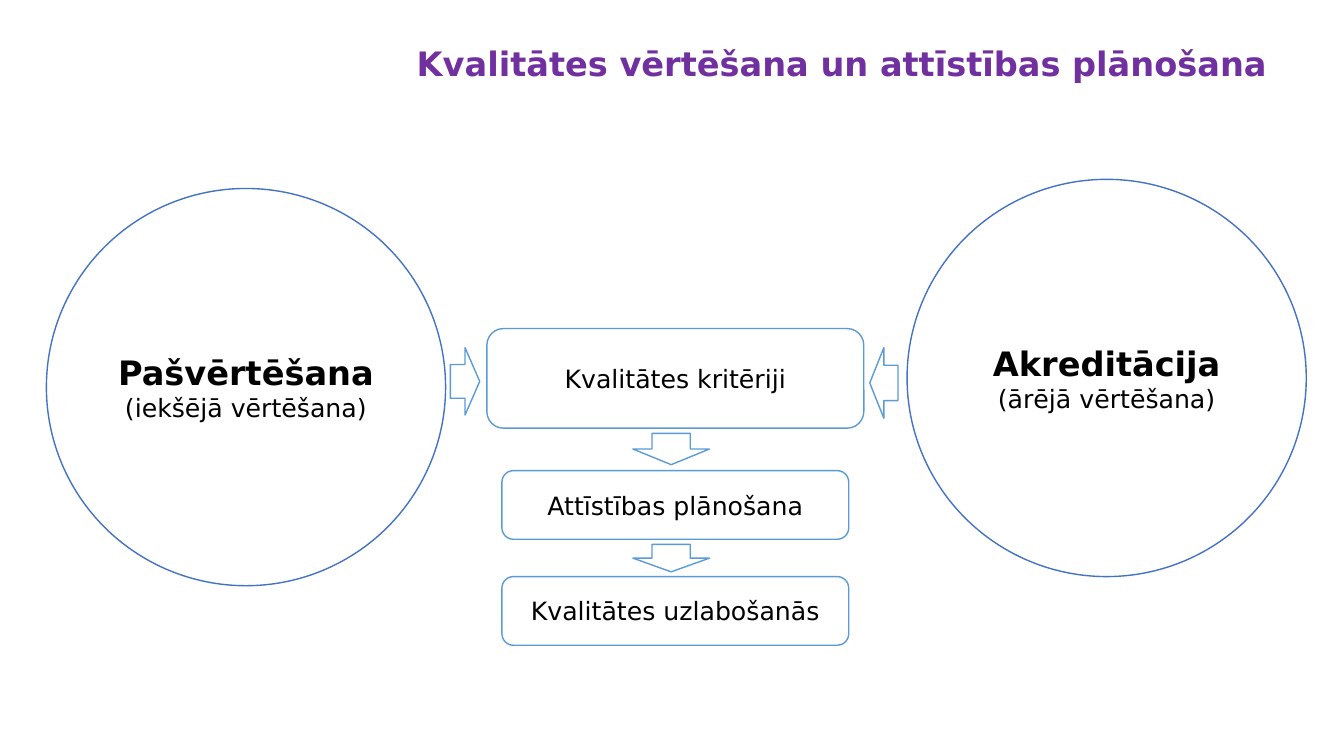
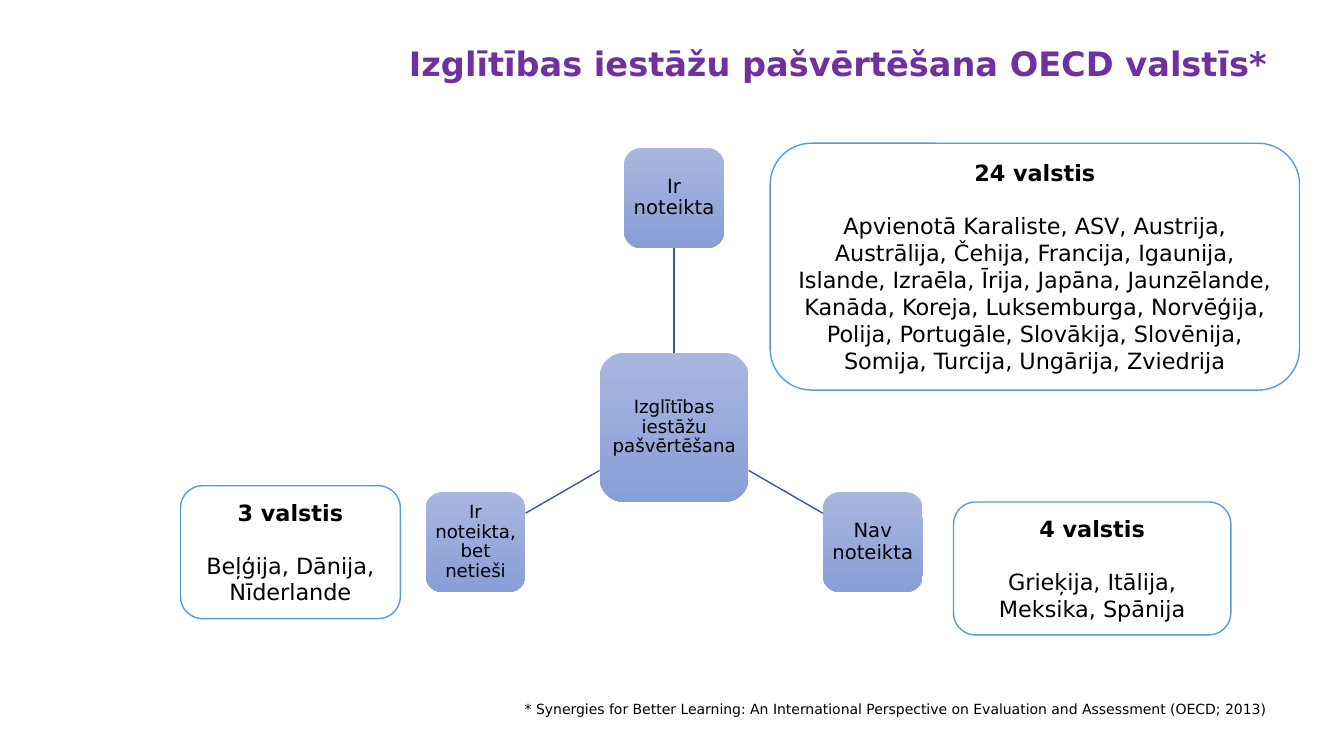
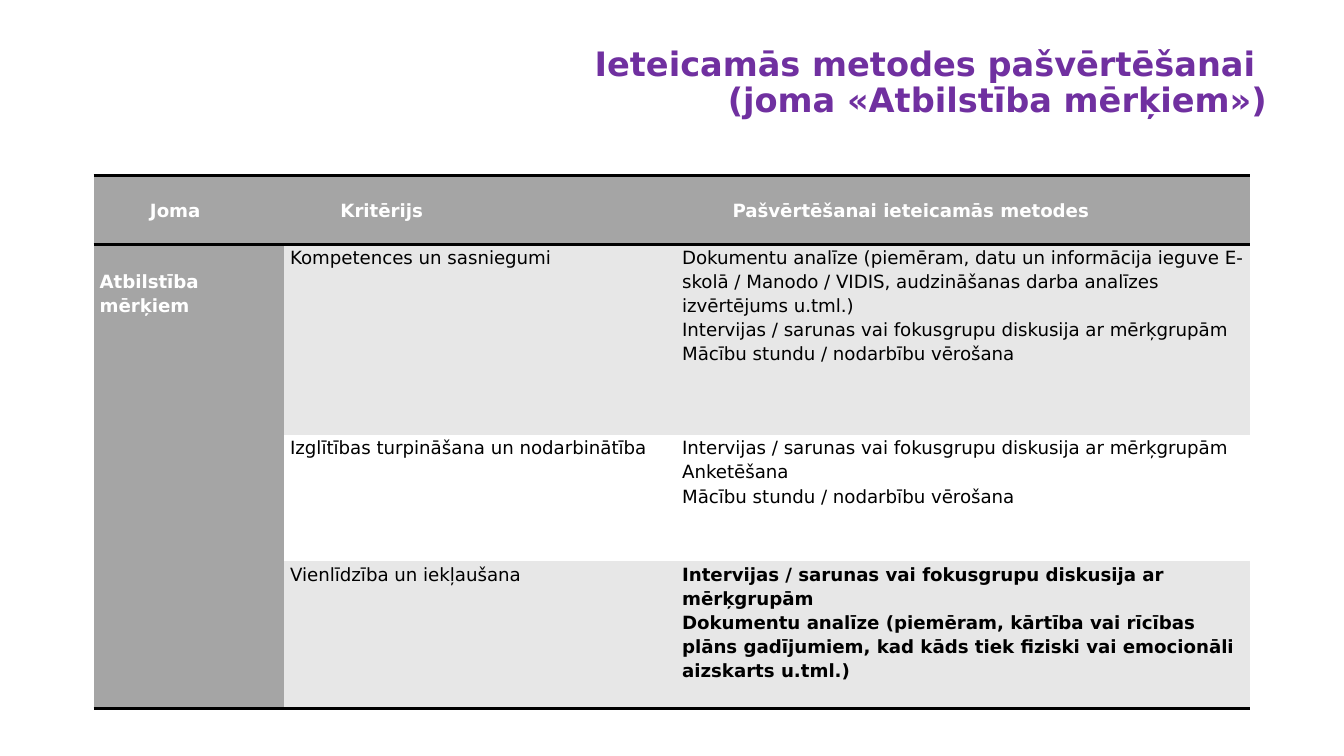
from dataclasses import dataclass
from math import cos, radians, sin

from lxml import etree
from pptx import Presentation
from pptx.dml.color import RGBColor
from pptx.enum.shapes import MSO_CONNECTOR, MSO_SHAPE
from pptx.enum.text import MSO_ANCHOR, PP_ALIGN
from pptx.oxml.ns import qn
from pptx.util import Cm, Pt

ELLIPSE, ROUNDED = MSO_SHAPE.OVAL, MSO_SHAPE.ROUNDED_RECTANGLE
RIGHT_ARROW, LEFT_ARROW = MSO_SHAPE.RIGHT_ARROW, MSO_SHAPE.LEFT_ARROW
DOWN_ARROW = MSO_SHAPE.DOWN_ARROW
STRAIGHT = MSO_CONNECTOR.STRAIGHT
LEFT, CENTER, RIGHT = PP_ALIGN.LEFT, PP_ALIGN.CENTER, PP_ALIGN.RIGHT
TOP, MIDDLE = MSO_ANCHOR.TOP, MSO_ANCHOR.MIDDLE
PLAIN_TABLE = "{2D5ABB26-0587-4C30-8999-92F81FD0307C}"
INSETS = (0.25, 0.13, 0.25, 0.13)


@dataclass(frozen=True)
class Theme:
    font: str = "DejaVu Sans"
    title: str = "7030A0"
    text: str = "000000"
    white: str = "FFFFFF"
    circle: str = "4472C4"
    outline: str = "5B9BD5"
    link: str = "365B9D"
    node_top: str = "A8B7DF"
    node_bottom: str = "889ED7"
    header: str = "A5A5A5"
    band: str = "E7E7E7"
    title_size: int = 24
    label_size: int = 18
    callout_size: int = 16
    node_size: int = 14
    small_size: int = 13
    note_size: int = 10


THEME = Theme()


def rgb(value):
    return RGBColor.from_string(value)


def set_values(target, values):
    for name, value in values.items():
        setattr(target, name, value)


class SlideBuilder:
    def __init__(self, deck):
        self.deck = deck
        self.slide = None

    def start(self, title):
        self.slide = self.deck.slides.add_slide(self.deck.slide_layouts[6])
        self.text_box((9.6, 1.07, 22.58, 2.87), title, THEME.title_size,
                      color=THEME.title, bold=True)

    def fill_text(self, frame, lines, size, color=THEME.text, bold=False,
                  align=CENTER, spacing=1.0):
        """Fill a frame; a line is a text or a (text, overrides) pair."""
        for index, line in enumerate(lines):
            text, changes = (line, {}) if isinstance(line, str) else line
            style = {"size": size, "bold": bold, "before": 0} | changes
            para = frame.paragraphs[0] if index == 0 else frame.add_paragraph()
            para.text = text
            set_values(para, {"alignment": align, "line_spacing": spacing,
                              "space_before": Pt(style["before"])})
            for span in para.runs:
                set_values(span.font, {"name": THEME.font, "bold": style["bold"],
                                       "size": Pt(style["size"])})
                span.font.color.rgb = rgb(color)

    def set_frame(self, frame, anchor, insets=INSETS):
        left, top, right, bottom = map(Cm, insets)
        set_values(frame, {"word_wrap": True, "vertical_anchor": anchor,
                           "margin_left": left, "margin_top": top,
                           "margin_right": right, "margin_bottom": bottom})

    def text_box(self, place, text, size, **style):
        box = self.slide.shapes.add_textbox(*map(Cm, place))
        self.set_frame(box.text_frame, TOP)
        self.fill_text(box.text_frame, [text], size, align=RIGHT, spacing=0.9, **style)

    def shape(self, kind, place, lines=(), size=THEME.label_size, line=THEME.outline):
        shape = self.slide.shapes.add_shape(kind, *map(Cm, place))
        shape.shadow.inherit = False
        shape.fill.solid()
        shape.fill.fore_color.rgb = rgb(THEME.white)
        shape.line.color.rgb = rgb(line)
        shape.line.width = Pt(1)
        self.set_frame(shape.text_frame, MIDDLE)
        self.fill_text(shape.text_frame, lines, size)

    def callout(self, place, heading, countries):
        self.shape(ROUNDED, place, [(heading, {"bold": True}),
                                    (countries, {"before": 18.6})],
                   THEME.callout_size)

    def node(self, center, side, text, size):
        left, top = (value - side / 2 for value in center)
        node = self.slide.shapes.add_shape(
            ROUNDED, Cm(left), Cm(top), Cm(side), Cm(side))
        node.shadow.inherit = False
        node.line.fill.background()
        node.fill.gradient()
        node.fill.gradient_angle = 270
        for stop, color in zip(node.fill.gradient_stops,
                               (THEME.node_top, THEME.node_bottom)):
            stop.color.rgb = rgb(color)
        self.set_frame(node.text_frame, MIDDLE, (0.1,) * 4)
        self.fill_text(node.text_frame, [text], size, spacing=0.9)

    def link(self, start, end):
        link = self.slide.shapes.add_connector(STRAIGHT, *map(Cm, start + end))
        link.line.color.rgb = rgb(THEME.link)
        link.line.width = Pt(1)
        etree.SubElement(link._element.spPr, qn("a:effectLst"))

    def table(self, place, widths, heights):
        left, top = place
        table = self.slide.shapes.add_table(
            len(heights), len(widths), Cm(left), Cm(top),
            Cm(sum(widths)), Cm(sum(heights))).table
        set_values(table, {"first_row": False, "horz_banding": False})
        table._tbl.tblPr.find(qn("a:tableStyleId")).text = PLAIN_TABLE
        for column, width in zip(table.columns, widths):
            column.width = Cm(width)
        for row, height in zip(table.rows, heights):
            row.height = Cm(height)
        return table

    def cell(self, cell, lines, fill, edges=(), indent=0, drop=0,
             anchor=TOP, **style):
        set_values(cell, {"vertical_anchor": anchor, "margin_top": Cm(drop),
                          "margin_bottom": 0, "margin_right": Cm(0.15),
                          "margin_left": Cm(0.15 + indent)})
        cell.fill.solid()
        cell.fill.fore_color.rgb = rgb(fill)
        self.fill_text(cell.text_frame, lines, THEME.small_size, align=LEFT,
                       spacing=1.15, **style)
        for position, edge in enumerate(edges):
            border = etree.Element(qn(f"a:{edge}"), w=str(Pt(2)))
            paint = etree.SubElement(border, qn("a:solidFill"))
            etree.SubElement(paint, qn("a:srgbClr"), val=THEME.text)
            cell._tc.get_or_add_tcPr().insert(position, border)


def build_quality_cycle(builder):
    builder.start("Kvalitātes vērtēšana un attīstības plānošana")
    for left, top, name, note in (
            (1.17, 4.75, "Pašvērtēšana", "(iekšējā vērtēšana)"),
            (22.86, 4.52, "Akreditācija", "(ārējā vērtēšana)")):
        builder.shape(ELLIPSE, (left, top, 10.06, 10.01),
                      [(name, {"size": THEME.title_size, "bold": True}), note],
                      line=THEME.circle)
    builder.shape(ROUNDED, (12.27, 8.28, 9.5, 2.51), ["Kvalitātes kritēriji"])
    for top, text in ((11.86, "Attīstības plānošana"),
                      (14.53, "Kvalitātes uzlabošanās")):
        builder.shape(ROUNDED, (12.65, top, 8.74, 1.73), [text])
    for kind, place in ((RIGHT_ARROW, (11.35, 8.76, 0.74, 1.7)),
                        (LEFT_ARROW, (21.92, 8.76, 0.71, 1.78)),
                        (DOWN_ARROW, (15.95, 10.92, 1.93, 0.79)),
                        (DOWN_ARROW, (15.95, 13.72, 1.93, 0.69))):
        builder.shape(kind, place)


def build_country_map(builder):
    builder.start("Izglītības iestāžu pašvērtēšana OECD valstīs*")
    hub, hub_side, node_side, radius = (16.99, 10.77), 3.76, 2.52, 5.78
    builder.node(hub, hub_side, "Izglītības iestāžu pašvērtēšana", THEME.small_size)
    for angle, text, size in (
            (270, "Ir noteikta", THEME.node_size),
            (30, "Nav noteikta", THEME.node_size),
            (150, "Ir noteikta, bet netieši", THEME.small_size)):
        across, down = cos(radians(angle)), sin(radians(angle))
        reach = 2 * max(abs(across), abs(down))
        start, end, center = (
            (hub[0] + distance * across, hub[1] + distance * down)
            for distance in (hub_side / reach, radius - node_side / reach, radius))
        builder.link(start, end)
        builder.node(center, node_side, text, size)
    builder.callout((24.03, 12.65, 6.99, 3.35), "4 valstis",
                    "Grieķija, Itālija, Meksika, Spānija")
    builder.callout((19.41, 3.61, 13.34, 6.22), "24 valstis",
                    "Apvienotā Karaliste, ASV, Austrija, Austrālija, Čehija, "
                    "Francija, Igaunija, Islande, Izraēla, Īrija, Japāna, "
                    "Jaunzēlande, Kanāda, Koreja, Luksemburga, Norvēģija, "
                    "Polija, Portugāle, Slovākija, Slovēnija, Somija, Turcija, "
                    "Ungārija, Zviedrija")
    builder.callout((4.55, 12.24, 5.54, 3.35), "3 valstis",
                    "Beļģija, Dānija, Nīderlande")
    builder.text_box((11.68, 17.58, 20.47, 0.76),
                     "* Synergies for Better Learning: An International Perspective "
                     "on Evaluation and Assessment (OECD; 2013)", THEME.note_size)


def build_methods(builder):
    builder.start("Ieteicamās metodes pašvērtēšanai \v(joma «Atbilstība mērķiem»)")
    interviews = "Intervijas / sarunas vai fokusgrupu diskusija ar mērķgrupām"
    lessons = "Mācību stundu / nodarbību vērošana"
    criteria = (
        ("Kompetences un sasniegumi",
         ["Dokumentu analīze (piemēram, datu un informācija ieguve E-skolā / "
          "Manodo / VIDIS, audzināšanas darba analīzes izvērtējums u.tml.)",
          interviews, lessons]),
        ("Izglītības turpināšana un nodarbinātība",
         [interviews, "Anketēšana", lessons]),
        ("Vienlīdzība un iekļaušana",
         [interviews,
          "Dokumentu analīze (piemēram, kārtība vai rīcības plāns gadījumiem, "
          "kad kāds tiek fiziski vai emocionāli aizskarts u.tml.)"]))
    table = builder.table((2.36, 4.42), (4.8, 9.88, 14.45), (1.74, 4.8, 3.18, 3.71))
    heading = {"fill": THEME.header, "color": THEME.white, "bold": True}
    for column, text in enumerate(
            ("Joma", "Kritērijs", "Pašvērtēšanai ieteicamās metodes")):
        builder.cell(table.cell(0, column), [text], edges=("lnT", "lnB"),
                     indent=1.27, anchor=MIDDLE, **heading)
    last = len(criteria)
    table.cell(1, 0).merge(table.cell(last, 0))
    builder.cell(table.cell(1, 0), ["Atbilstība mērķiem"], edges=("lnB",),
                 drop=0.61, **heading)
    builder.cell(table.cell(last, 0), [], THEME.header, ("lnB",))
    for row, (criterion, methods) in enumerate(criteria, 1):
        fill = THEME.band if row % 2 else THEME.white
        edges = ("lnB",) if row == last else ()
        builder.cell(table.cell(row, 1), [criterion], fill, edges)
        builder.cell(table.cell(row, 2), methods, fill, edges, bold=row == last)


def main():
    deck = Presentation()
    set_values(deck, {"slide_width": Cm(33.87), "slide_height": Cm(19.05)})
    builder = SlideBuilder(deck)
    for build in (build_quality_cycle, build_country_map, build_methods):
        build(builder)
    deck.save("out.pptx")


if __name__ == "__main__":
    main()
